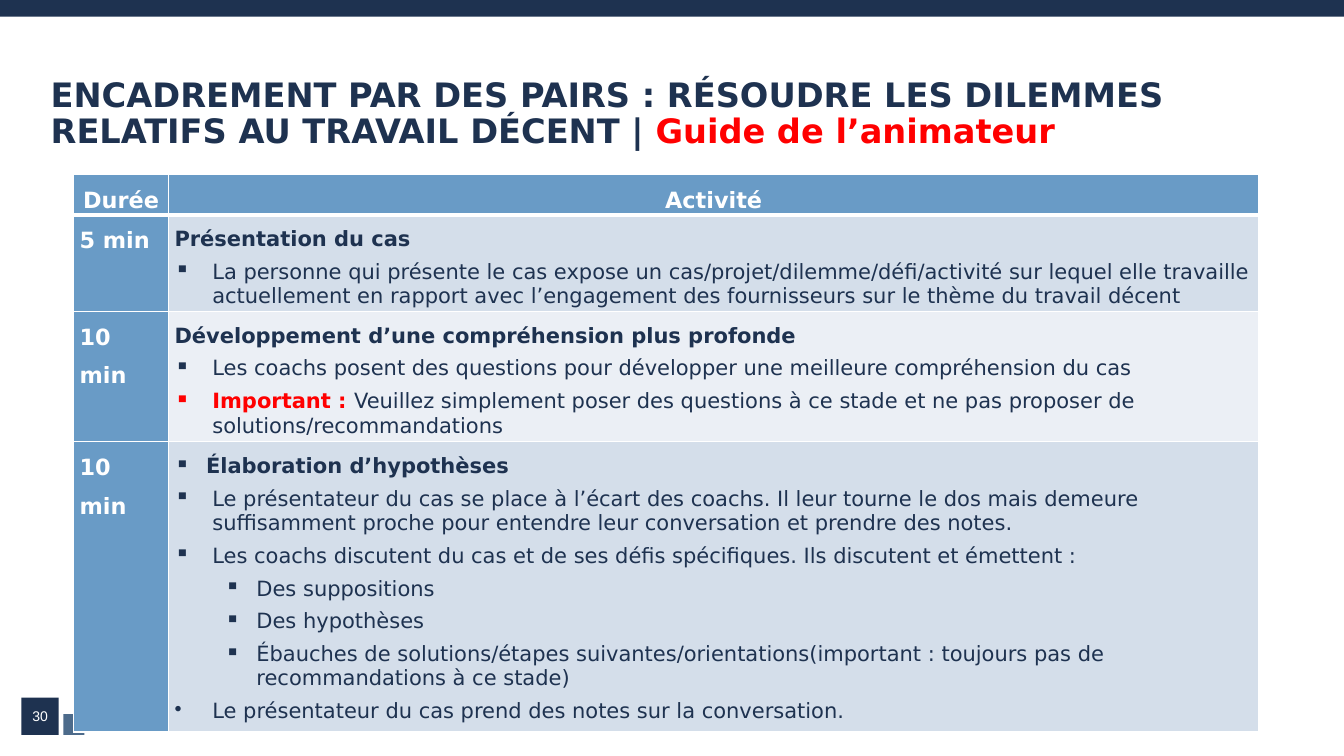
from lxml import etree
from pptx import Presentation
from pptx.dml.color import RGBColor
from pptx.enum.shapes import MSO_SHAPE
from pptx.enum.text import MSO_ANCHOR, MSO_AUTO_SIZE, PP_ALIGN
from pptx.oxml.ns import qn
from pptx.util import Pt

RECTANGLE = MSO_SHAPE.RECTANGLE
TOP, MIDDLE = MSO_ANCHOR.TOP, MSO_ANCHOR.MIDDLE
LEFT, CENTER, JUSTIFY = PP_ALIGN.LEFT, PP_ALIGN.CENTER, PP_ALIGN.JUSTIFY
NO_AUTOFIT = MSO_AUTO_SIZE.NONE

NAVY, SLATE, BLUE = "1E3250", "4D6B8B", "699BC6"
PALE, PALER, WHITE, RED = "D4DEEA", "EBEFF5", "FFFFFF", "FF0000"
FONT, NUMBER_FONT = "DejaVu Sans", "Arial"

HEADING = {"bold": True, "spacing": 1.5}
BULLETED_HEADING = {**HEADING, "bullet": "▪", "margin": 22.5, "hanging": 22.5}
ITEM = {"bullet": "▪", "margin": 27, "hanging": 27}
DOT_ITEM = {**ITEM, "bullet": "•"}
SUBITEM = {"bullet": "▪", "margin": 58.5, "hanging": 22.5, "level": 1}

COLUMN_WIDTHS = (67.8, 778.8)
HEADER_HEIGHT = 24.5
STEPS = [
    ("5 min", 67, PALE, [
        (HEADING, ["Présentation du cas"]),
        (ITEM, ["La personne qui présente le cas expose un cas/projet/dilemme/défi/activité "
                "sur lequel elle travaille actuellement en rapport avec l’engagement des "
                "fournisseurs sur le thème du travail décent"]),
    ]),
    ("10 min", 72.7, PALER, [
        (HEADING, ["Développement d’une compréhension plus profonde"]),
        (ITEM, ["Les coachs posent des questions pour développer une meilleure "
                "compréhension du cas"]),
        (ITEM, [("Important : ", RED, True),
                "Veuillez simplement poser des questions à ce stade et ne pas proposer "
                "de solutions/recommandations"]),
    ]),
    ("10 min", 207.4, PALE, [
        (BULLETED_HEADING, ["Élaboration d’hypothèses"]),
        (ITEM, ["Le présentateur du cas se place à l’écart des coachs. Il leur tourne le dos "
                "mais demeure suffisamment proche pour entendre leur conversation et prendre "
                "des notes."]),
        (ITEM, ["Les coachs discutent du cas et de ses défis spécifiques. "
                "Ils discutent et émettent :"]),
        (SUBITEM, ["Des suppositions"]),
        (SUBITEM, ["Des hypothèses"]),
        (SUBITEM, ["Ébauches de solutions/étapes suivantes/orientations(important : "
                   "toujours pas de recommandations à ce stade)"]),
        (DOT_ITEM, ["Le présentateur du cas prend des notes sur la conversation."]),
    ]),
]


def color(value):
    """Turn a hex string into a colour."""
    return RGBColor.from_string(value)


class Page:
    """Hold the slide and its style, with a method for each kind of element."""

    def __init__(self, deck):
        """Add a slide with a title to the deck."""
        self.slide = deck.slides.add_slide(deck.slide_layouts[5])

    def paragraph(self, para, spans, size, ink, bold=False, font=FONT, align=LEFT, spacing=1.0,
                  before=0, bullet=None, margin=0, hanging=0, level=0):
        """Fill and format one paragraph; a span may carry its own colour and weight."""
        para.alignment, para.line_spacing = align, spacing
        para.space_before, para.level = Pt(before), level
        if bullet:
            properties = para._p.get_or_add_pPr()
            properties.set("marL", str(Pt(margin)))
            properties.set("indent", str(-Pt(hanging)))
            etree.SubElement(properties, qn("a:buChar"), char=bullet)
        para.font.name, para.font.size, para.font.bold = font, Pt(size), bold
        para.font.color.rgb = color(ink)
        for entry in spans:
            text, span_ink, span_bold = (entry, None, None) if isinstance(entry, str) else entry
            span = para.add_run()
            span.text = text
            if span_ink:
                span.font.color.rgb = color(span_ink)
                span.font.bold = span_bold

    def title(self, left, top, width, height, spans):
        """Move and fill the title placeholder."""
        box = self.slide.shapes.title
        box.left, box.top, box.width, box.height = map(Pt, (left, top, width, height))
        frame = box.text_frame
        frame.auto_size, frame.vertical_anchor = NO_AUTOFIT, TOP
        self.paragraph(frame.paragraphs[0], spans, 24, NAVY, bold=True, spacing=0.9)

    def block(self, left, top, width, height, fill):
        """Add a plain rectangle."""
        box = self.slide.shapes.add_shape(RECTANGLE, *map(Pt, (left, top, width, height)))
        box.shadow.inherit = False
        box.fill.solid()
        box.fill.fore_color.rgb = color(fill)
        box.line.fill.background()

    def label(self, left, top, width, height, text):
        """Add a small centred text box."""
        frame = self.slide.shapes.add_textbox(*map(Pt, (left, top, width, height))).text_frame
        frame.word_wrap, frame.vertical_anchor = True, MIDDLE
        self.paragraph(frame.paragraphs[0], [text], 10, WHITE, font=NUMBER_FONT, align=CENTER)

    def cell(self, cell, fill, top_line=1, bottom_line=1):
        """Set the borders, fill and insets of a table cell."""
        properties = cell._tc.get_or_add_tcPr()
        for side, weight in (("L", 1), ("R", 1), ("T", top_line), ("B", bottom_line)):
            line = etree.SubElement(properties, qn("a:ln" + side), w=str(Pt(weight)))
            etree.SubElement(etree.SubElement(line, qn("a:solidFill")), qn("a:srgbClr"), val=WHITE)
        cell.fill.solid()
        cell.fill.fore_color.rgb = color(fill)
        cell.margin_left = cell.margin_right = Pt(4.3)
        cell.margin_top = cell.margin_bottom = Pt(0)

    def table(self, left, top, headers, steps):
        """Add the table of durations and activities."""
        heights = [HEADER_HEIGHT] + [height for _, height, _, _ in steps]
        table = self.slide.shapes.add_table(
            len(heights), len(COLUMN_WIDTHS),
            *map(Pt, (left, top, sum(COLUMN_WIDTHS), sum(heights)))).table
        table.first_row = table.horz_banding = False
        for column, width in zip(table.columns, COLUMN_WIDTHS):
            column.width = Pt(width)
        for row, height in zip(table.rows, heights):
            row.height = Pt(height)
        label_style = {"size": 16, "ink": WHITE, "bold": True, "spacing": 1.5, "before": 6}
        for index, header in enumerate(headers):
            cell = table.cell(0, index)
            self.cell(cell, BLUE, bottom_line=3)
            self.paragraph(cell.text_frame.paragraphs[0], [header], align=CENTER, **label_style)
        for number, (duration, _, fill, activity) in enumerate(steps, 1):
            time_cell, activity_cell = table.cell(number, 0), table.cell(number, 1)
            top_line = 3 if number == 1 else 1
            self.cell(time_cell, BLUE, top_line)
            self.cell(activity_cell, fill, top_line)
            self.paragraph(time_cell.text_frame.paragraphs[0], [duration], align=JUSTIFY,
                           **label_style)
            frame = activity_cell.text_frame
            for index, (style, spans) in enumerate(activity):
                para = frame.add_paragraph() if index else frame.paragraphs[0]
                self.paragraph(para, spans, 15, NAVY, before=6, **style)


def main():
    """Build the slide and save it."""
    deck = Presentation()
    deck.slide_width, deck.slide_height = Pt(960), Pt(540)
    page = Page(deck)
    page.block(0, 0, 960, 12, NAVY)
    page.block(15.3, 498.3, 26.6, 26.6, NAVY)
    page.block(45.2, 510, 15, 15, SLATE)
    page.title(29, 52.5, 854, 47.5, [
        "ENCADREMENT PAR DES PAIRS : RÉSOUDRE LES DILEMMES RELATIFS AU TRAVAIL DÉCENT | ",
        ("Guide de l’animateur", RED, True)])
    page.label(5, 503.3, 47.5, 16.6, "30")
    page.table(52.6, 124.6, ("Durée ", "Activité"), STEPS)
    deck.save("out.pptx")


if __name__ == "__main__":
    main()
